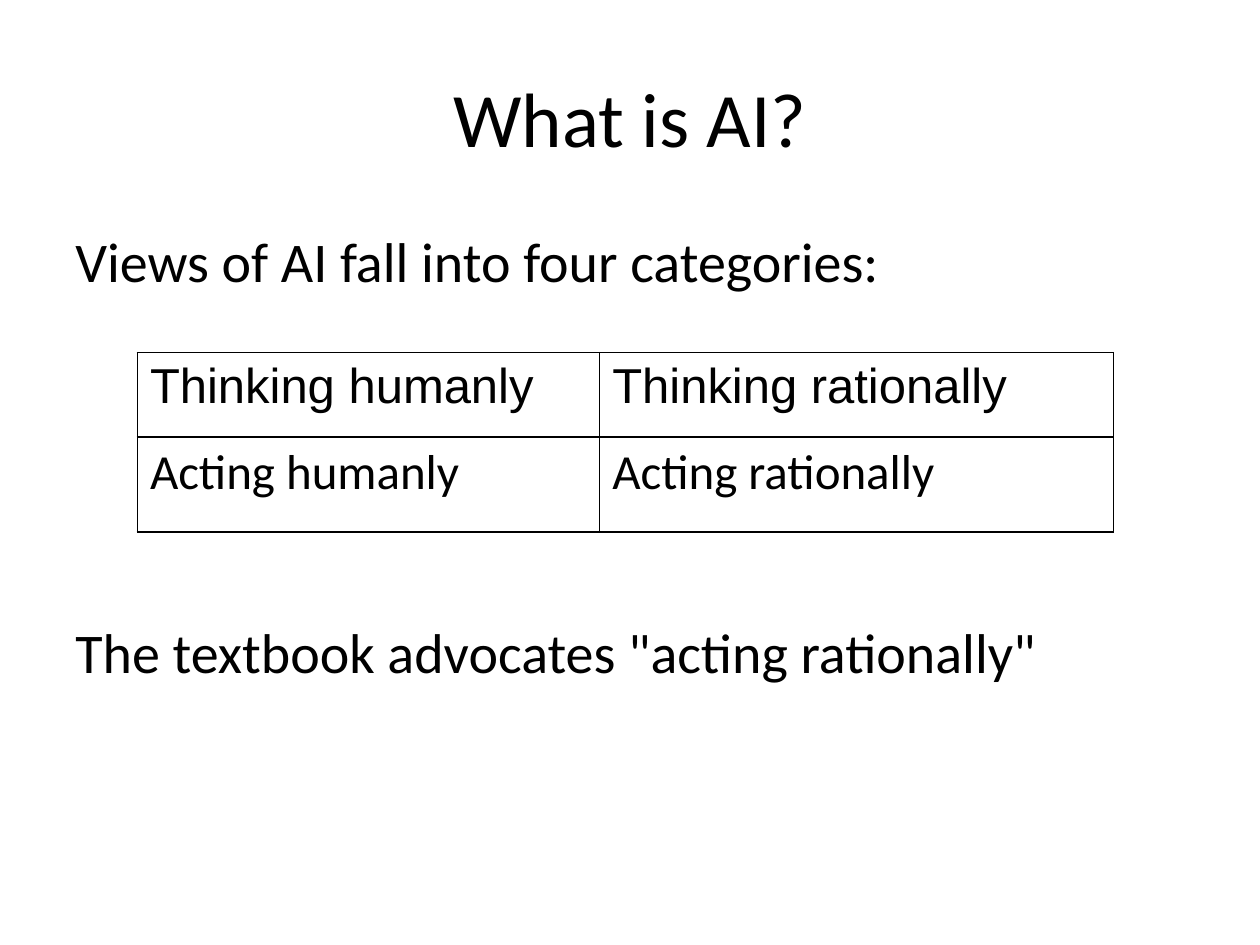
from lxml.etree import SubElement
from pptx import Presentation
from pptx.dml.color import RGBColor
from pptx.enum.text import MSO_ANCHOR as Anchor, PP_ALIGN as Align
from pptx.oxml.ns import qn
from pptx.util import Cm, Pt

BLACK = RGBColor(0, 0, 0)
WHITE = RGBColor(255, 255, 255)


class SlideBuilder:
    heading_font = "Calibri"
    border_width = Pt(1)

    def __init__(self, presentation):
        self.slide = presentation.slides.add_slide(presentation.slide_layouts[5])
        background = self.slide.background.fill
        background.solid()
        background.fore_color.rgb = WHITE

    def style(self, paragraph, size, font_name=heading_font, align=Align.LEFT):
        paragraph.alignment = align
        paragraph.font.name = font_name
        paragraph.font.size = Pt(size)
        paragraph.font.color.rgb = BLACK

    def place(self, shape, left, top, width, height):
        shape.left, shape.top = Cm(left), Cm(top)
        shape.width, shape.height = Cm(width), Cm(height)

    def title(self, text, *box):
        shape = self.slide.shapes.title
        self.place(shape, *box)
        shape.text_frame.text = text
        shape.text_frame.vertical_anchor = Anchor.MIDDLE
        self.style(shape.text_frame.paragraphs[0], 44, align=Align.CENTER)

    def body(self, lines, gap, *box):
        shape = self.slide.shapes.add_textbox(*map(Cm, box))
        frame = shape.text_frame
        frame.word_wrap = True
        frame.text = "\n".join(lines)
        for paragraph in frame.paragraphs:
            self.style(paragraph, 32)
        for paragraph in frame.paragraphs[1:]:
            paragraph.space_before = Pt(gap)

    def border(self, cell):
        properties = cell._tc.get_or_add_tcPr()
        for position, side in enumerate(("a:lnL", "a:lnR", "a:lnT", "a:lnB")):
            line = SubElement(properties, qn(side), w=str(self.border_width))
            fill = SubElement(line, qn("a:solidFill"))
            SubElement(fill, qn("a:srgbClr"), val=str(BLACK))
            properties.insert(position, line)

    def table(self, rows, row_fonts, left, top, widths, heights):
        table = self.slide.shapes.add_table(
            len(rows), len(widths), Cm(left), Cm(top), Cm(sum(widths)), Cm(sum(heights))
        ).table
        table.first_row = table.horz_banding = False
        for column, width in zip(table.columns, widths):
            column.width = Cm(width)
        for row, height, texts, font_name in zip(table.rows, heights, rows, row_fonts):
            row.height = Cm(height)
            for cell, text in zip(row.cells, texts):
                cell.text = text
                cell.fill.background()
                self.style(cell.text_frame.paragraphs[0], 28, font_name)
                self.border(cell)


def main():
    presentation = Presentation()
    presentation.slide_width, presentation.slide_height = Cm(25.4), Cm(19.05)
    builder = SlideBuilder(presentation)
    builder.title("What is AI?", 1.27, 0.76, 22.86, 3.18)
    builder.body(
        ["Views of AI fall into four categories:", 'The textbook advocates "acting rationally"'],
        185, 1.27, 4.45, 22.86, 12.57,
    )
    builder.table(
        [["Thinking humanly", "Thinking rationally"], ["Acting humanly", "Acting rationally"]],
        ["Arial", "Calibri"], 2.77, 7.11, [9.32, 10.36], [1.7, 1.91],
    )
    presentation.save("out.pptx")


if __name__ == "__main__":
    main()
